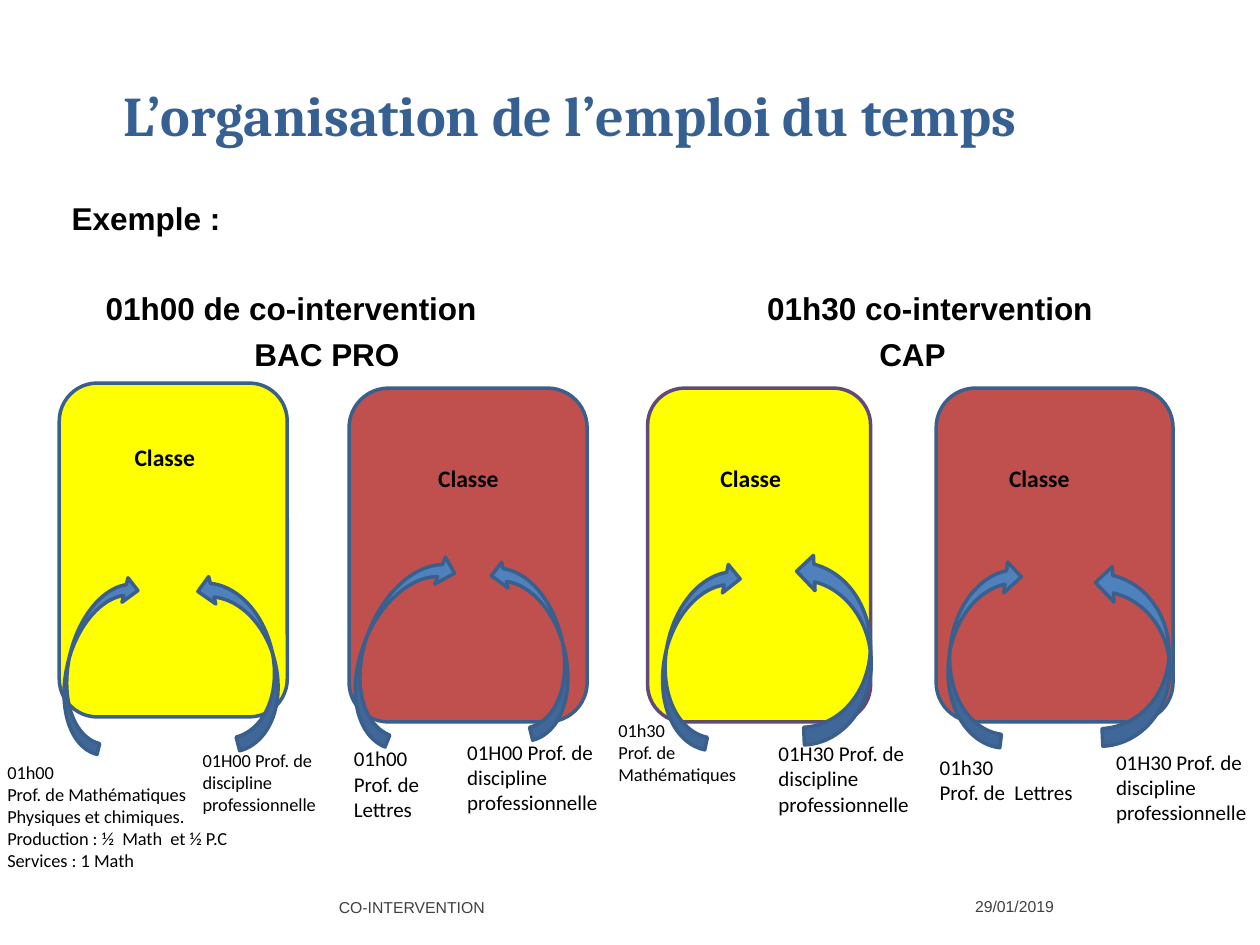
from lxml.etree import SubElement
from pptx import Presentation
from pptx.dml.color import RGBColor
from pptx.enum.shapes import MSO_SHAPE as Shape
from pptx.enum.text import MSO_ANCHOR as Anchor, MSO_AUTO_SIZE as AutoSize, PP_ALIGN as Align
from pptx.oxml.ns import qn
from pptx.util import Inches, Pt

COLORS = {
    "title": "376092", "text": "000000", "footer": "404040",
    "yellow": "FFFF00", "red": "C0504D", "arrow": "4F81BD",
    "blue_line": "3A5F8C", "purple_line": "5F4A78",
}


class SlideBuilder:
    def __init__(self, slide):
        self.slide = slide

    def text(self, at, lines, size, font="Calibri", color="text", bold=False,
             anchor=Anchor.TOP, grow=False):
        box = self.slide.shapes.add_textbox(*map(Inches, at))
        frame = box.text_frame
        frame.word_wrap = True
        frame.vertical_anchor = anchor
        frame.auto_size = AutoSize.SHAPE_TO_FIT_TEXT if grow else AutoSize.NONE
        for index, line in enumerate(lines):
            para = frame.add_paragraph() if index else frame.paragraphs[0]
            span = para.add_run()
            span.text = line
            span.font.name = font
            span.font.size = Pt(size)
            span.font.bold = bold
            span.font.color.rgb = RGBColor.from_string(COLORS[color])
        return frame

    def shape(self, kind, at, fill, line="blue_line", rotation=0):
        shape = self.slide.shapes.add_shape(kind, *map(Inches, at))
        shape.shadow.inherit = False
        shape.rotation = rotation
        shape.fill.solid()
        shape.fill.fore_color.rgb = RGBColor.from_string(COLORS[fill])
        shape.line.color.rgb = RGBColor.from_string(COLORS[line])
        shape.line.width = Pt(2)
        return shape

    def rising_arrow(self, at, rotation):
        """Arrow that starts below a class and bends right into it."""
        arrow = self.shape(Shape.CURVED_LEFT_ARROW, at, "arrow", rotation=rotation)
        arrow.adjustments[0] = 0.22

    def returning_arrow(self, at, rotation):
        """Arrow that starts below a class and bends left into it."""
        self.shape(Shape.CURVED_UP_ARROW, at, "arrow", rotation=rotation)

    def tab_stops(self, para, positions):
        tabs = SubElement(para._p.get_or_add_pPr(), qn("a:tabLst"))
        for position in positions:
            SubElement(tabs, qn("a:tab"), pos=str(Inches(position)), algn="l")


def main():
    deck = Presentation()
    deck.slide_width, deck.slide_height = Inches(10), Inches(7.5)
    page = SlideBuilder(deck.slides.add_slide(deck.slide_layouts[6]))

    footer = page.text((2.59, 6.72, 3.88, 0.74), ["CO-INTERVENTION"], 9, "Arial",
                       "footer", anchor=Anchor.MIDDLE)
    footer.margin_top = Inches(0.27)
    page.text((7.64, 6.99, 1.27, 0.4), ["29/01/2019"], 9, "Arial", "footer",
              anchor=Anchor.MIDDLE)
    page.text((0.88, 0.2, 8.62, 1.41), ["L’organisation de l’emploi du temps"], 32,
              "Cambria", "title", bold=True, anchor=Anchor.MIDDLE)

    headings = page.text(
        (0.47, 1.53, 9.09, 3.57),
        ["Exemple :", "\t01h00 de co-intervention\t01h30 co-intervention", "\tBAC PRO\tCAP"],
        18, "Arial", bold=True)
    layout = [([], 0), ([0.27, 5.52], 30), ([1.45, 6.41], 4.5)]
    for para, (stops, space) in zip(headings.paragraphs, layout):
        para.alignment = Align.JUSTIFY
        para.space_before = Pt(space)
        if stops:
            page.tab_stops(para, stops)

    classes = [
        ((0.47, 3.04, 1.81, 2.65), "yellow", "blue_line", (0.97, 3.47, 0.97, 0.33)),
        ((2.77, 3.08, 1.89, 2.65), "red", "blue_line", (3.38, 3.63, 1.04, 0.33)),
        ((5.14, 3.08, 1.77, 2.65), "yellow", "purple_line", (5.62, 3.63, 1.07, 0.33)),
        ((7.43, 3.08, 1.88, 2.65), "red", "blue_line", (7.91, 3.63, 1.11, 0.33)),
    ]
    for card, fill, line, label in classes:
        page.shape(Shape.ROUNDED_RECTANGLE, card, fill, line)
        page.text(label, ["Classe"], 13.5, bold=True, grow=True)

    arrows = [
        ((0.55, 4.52, 0.4, 1.44), 194, (1.23, 4.99, 1.42, 0.45), 255.3),
        ((2.91, 4.3, 0.46, 1.6), 201.8, (3.53, 4.91, 1.45, 0.42), 255.9),
        ((5.29, 4.42, 0.46, 1.5), 191.7, (5.87, 4.86, 1.52, 0.56), 267.4),
        ((7.54, 4.42, 0.49, 1.49), 187.2, (8.28, 4.91, 1.44, 0.56), 267.4),
    ]
    for left_at, left_turn, right_at, right_turn in arrows:
        page.rising_arrow(left_at, left_turn)
        page.returning_arrow(right_at, right_turn)

    general_teachers = [
        ((-0.04, 5.99, 2.26, 0.98), 10.5,
         ["01h00", "Prof. de Mathématiques  Physiques et chimiques.",
          "Production : ½  Math  et ½ P.C", "Services : 1 Math"]),
        ((2.71, 5.87, 1.08, 0.71), 12, ["01h00", "Prof. de  Lettres"]),
        ((4.81, 5.66, 1.54, 0.63), 10.5, ["01h30", "Prof. de Mathématiques"]),
        ((7.36, 5.94, 1.44, 0.73), 12, ["01h30", "Prof. de  Lettres"]),
    ]
    for at, size, lines in general_teachers:
        page.text(at, lines, size, grow=True)

    vocational_teachers = [
        ((1.51, 5.9, 1.3, 0.63), 10.5, "01H00"),
        ((3.61, 5.82, 1.49, 0.93), 12, "01H00"),
        ((6.08, 5.83, 1.28, 0.71), 12, "01H30"),
        ((8.76, 5.9, 1.37, 0.71), 12, "01H30"),
    ]
    for at, size, hours in vocational_teachers:
        page.text(at, [f"{hours} Prof. de discipline professionnelle"], size, grow=True)

    deck.save("out.pptx")


if __name__ == "__main__":
    main()
